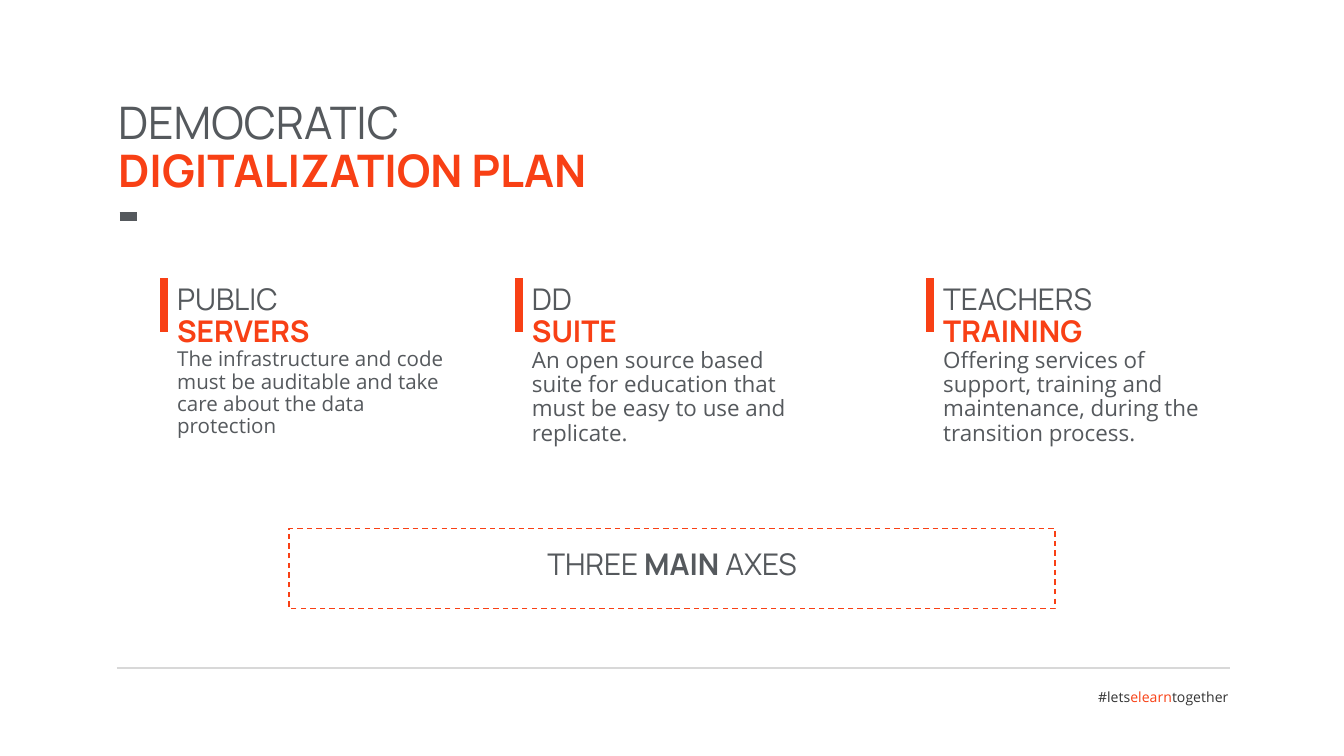
from lxml.etree import SubElement
from pptx import Presentation
from pptx.dml.color import RGBColor
from pptx.enum.dml import MSO_LINE
from pptx.enum.shapes import MSO_CONNECTOR, MSO_SHAPE
from pptx.enum.text import PP_ALIGN
from pptx.oxml.ns import qn
from pptx.util import Pt

ORANGE = RGBColor(0xF8, 0x40, 0x15)
GREY = RGBColor(0x55, 0x59, 0x5D)
DARK = RGBColor(0x33, 0x33, 0x33)
RULE = RGBColor(0xD8, 0xD8, 0xD8)
HEAD, BODY = "Manrope", "Open Sans"

TITLE = ("DEMOCRATIC", "DIGITALIZATION PLAN")
# left, first word, second word, description, description size
AXES = [
    (87.84, "PUBLIC", "SERVERS",
     "The infrastructure and code must be auditable and take care about the data protection", 11),
    (277.92, "DD", "SUITE",
     "An open source based suite for education that must be easy to use and replicate.", 12),
    (498.24, "TEACHERS", "TRAINING",
     "Offering services of support, training and maintenance, during the transition process.", 12),
]
SUMMARY = [("THREE ", False), ("MAIN", True), (" AXES", False)]
HASHTAG = [("#lets", DARK), ("elearn", ORANGE), ("together", DARK)]
AXES_TOP, AXIS_W, AXIS_H, BAR_H = 149, 161.3, 104, 28.8


def run(text, size=16, font=HEAD, color=GREY, bold=False):
    return text, size, font, color, bold


def heading(first, second, size):
    """Two paragraphs: a light grey line over a bold orange one."""
    return [[run(first, size)], [run(second, size, color=ORANGE, bold=True)]]


def add_text(s, paragraphs, x, y, w, h, align=PP_ALIGN.LEFT):
    tf = s.shapes.add_textbox(Pt(x), Pt(y), Pt(w), Pt(h)).text_frame
    tf.word_wrap = True
    for i, runs in enumerate(paragraphs):
        p = tf.add_paragraph() if i else tf.paragraphs[0]
        p.alignment = align
        p.line_spacing = 0.9
        for text, size, font, color, bold in runs:
            r = p.add_run()
            r.text = text
            r.font.size = Pt(size)
            r.font.name = font
            r.font.color.rgb = color
            r.font.bold = bold


def add_line(s, x1, y1, x2, y2, color, width):
    line = s.shapes.add_connector(MSO_CONNECTOR.STRAIGHT, Pt(x1), Pt(y1), Pt(x2), Pt(y2))
    line.line.color.rgb = color
    line.line.width = Pt(width)
    SubElement(line._element.spPr, qn("a:effectLst"))


prs = Presentation()
prs.slide_width, prs.slide_height = Pt(720), Pt(405)
s = prs.slides.add_slide(prs.slide_layouts[6])

add_line(s, 62.6, 357.9, 658.8, 357.9, RULE, 1)
add_text(s, [[run(t, 7.5, BODY, c) for t, c in HASHTAG]],
         548.6, 366.5, 116.6, 16.6, PP_ALIGN.RIGHT)

add_text(s, heading(*TITLE, 24), 56.2, 50.4, 340.6, 65.5)
add_line(s, 64.1, 115.9, 73.4, 115.9, GREY, 4.5)

for x, first, second, description, size in AXES:
    add_text(s, heading(first, second, 16) + [[run(description, size, BODY)]],
             x, AXES_TOP, AXIS_W, AXIS_H)
    add_line(s, x, AXES_TOP, x, AXES_TOP + BAR_H, ORANGE, 4.5)

frame = s.shapes.add_shape(MSO_SHAPE.RECTANGLE, Pt(154.8), Pt(283), Pt(410.4), Pt(43.2))
frame.shadow.inherit = False
frame.fill.background()
frame.line.color.rgb = ORANGE
frame.line.width = Pt(0.75)
frame.line.dash_style = MSO_LINE.DASH
add_text(s, [[run(t, bold=b) for t, b in SUMMARY]], 175, 290.9, 370, 23, PP_ALIGN.CENTER)

prs.save("out.pptx")
